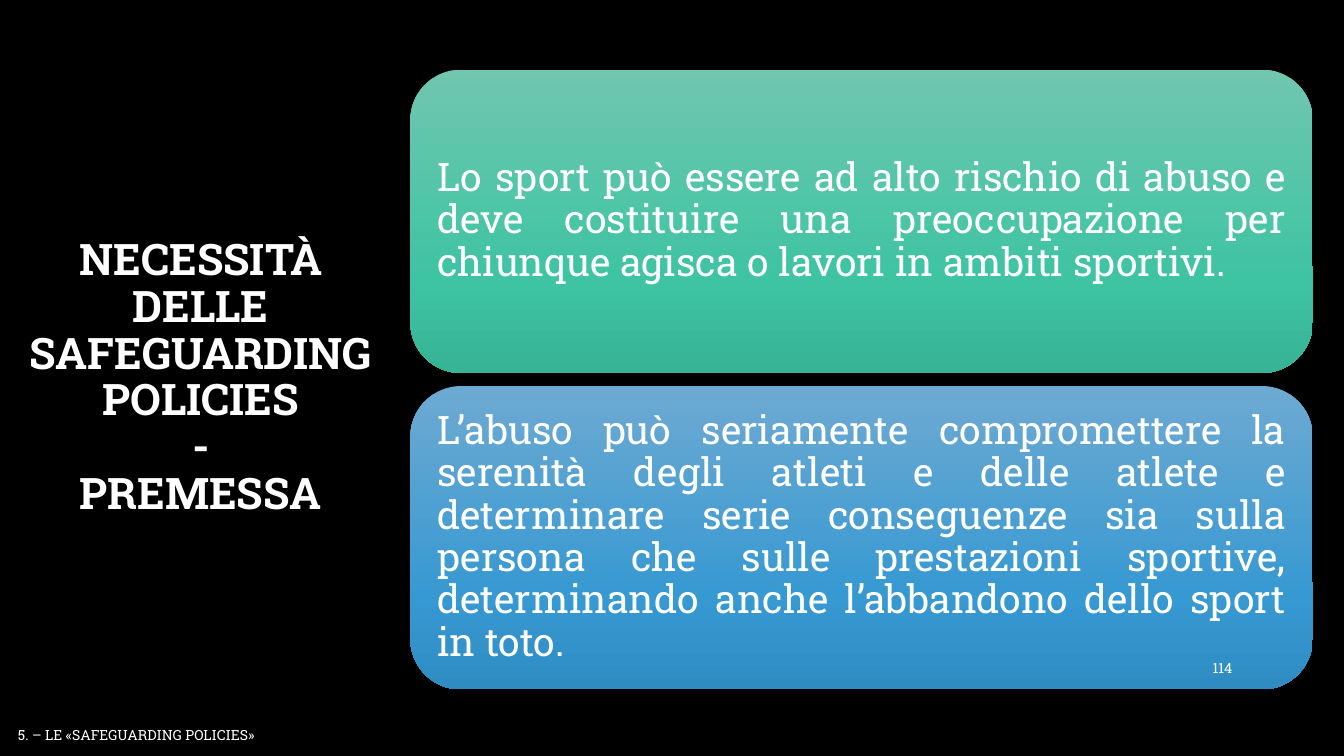
from copy import deepcopy

from pptx import Presentation
from pptx.dml.color import RGBColor
from pptx.enum.shapes import MSO_SHAPE
from pptx.enum.text import MSO_ANCHOR, MSO_AUTO_SIZE, PP_ALIGN
from pptx.util import Inches, Pt

FONT = "Roboto Slab"
WHITE = "FFFFFF"
BLACK = "000000"
STOP_POSITIONS = (0, 0.69, 1)
CARD_TOP = 0.69
CARD_STEP = 3.14
TITLE_LINES = ("NECESSITÀ DELLE SAFEGUARDING POLICIES", "-", "PREMESSA")
CARDS = (
    (
        ("70C6AF", "3EC4A3", "37B395"),
        "Lo sport può essere ad alto rischio di abuso e deve costituire una "
        "preoccupazione per chiunque agisca o lavori in ambiti sportivi.",
    ),
    (
        ("6DAAD2", "3799D2", "2F8CC2"),
        "L’abuso può seriamente compromettere la serenità degli atleti e delle "
        "atlete e determinare serie conseguenze sia sulla persona che sulle "
        "prestazioni sportive, determinando anche l’abbandono dello sport in toto.",
    ),
)


def color(value):
    """Turn a hex string into a colour."""
    return RGBColor.from_string(value)


def write_lines(text_frame, lines, size, alignment, bold=False, spacing=1.0):
    """Write one paragraph whose lines are parted by line breaks."""
    text_frame.word_wrap = True
    paragraph = text_frame.paragraphs[0]
    paragraph.alignment = alignment
    paragraph.line_spacing = spacing
    for index, line in enumerate(lines):
        if index:
            paragraph.add_line_break()
        run = paragraph.add_run()
        run.text = line
        run.font.name = FONT
        run.font.size = Pt(size)
        run.font.bold = bold
        run.font.color.rgb = color(WHITE)


def add_text(slide, left, top, width, height, lines, size, alignment,
             anchor=MSO_ANCHOR.MIDDLE, **style):
    """Add a text box and return its text frame."""
    box = slide.shapes.add_textbox(
        Inches(left), Inches(top), Inches(width), Inches(height))
    box.text_frame.vertical_anchor = anchor
    write_lines(box.text_frame, lines, size, alignment, **style)
    return box.text_frame


def fill_gradient(shape, colors):
    """Fill a shape with a three-stop gradient running downwards."""
    shape.fill.gradient()
    shape.fill.gradient_angle = 270
    stop_list = shape.element.spPr.find(".//{*}gsLst")
    stop_list.append(deepcopy(stop_list[-1]))
    for stop, position, value in zip(
            shape.fill.gradient_stops, STOP_POSITIONS, colors):
        stop.position = position
        stop.color.rgb = color(value)


def add_card(slide, top, colors, text):
    """Add a rounded gradient card with justified text."""
    card = slide.shapes.add_shape(
        MSO_SHAPE.ROUNDED_RECTANGLE,
        Inches(4.07), Inches(top), Inches(8.95), Inches(3.01))
    card.shadow.inherit = False
    card.line.fill.background()
    fill_gradient(card, colors)
    frame = card.text_frame
    frame.vertical_anchor = MSO_ANCHOR.MIDDLE
    frame.margin_left = frame.margin_right = Inches(0.12)
    frame.margin_top = frame.margin_bottom = Inches(0.12)
    write_lines(frame, [text], 28, PP_ALIGN.JUSTIFY, spacing=0.9)


def main():
    """Build the slide and save it."""
    presentation = Presentation()
    presentation.slide_width = Inches(13.33)
    presentation.slide_height = Inches(7.5)
    slide = presentation.slides.add_slide(presentation.slide_layouts[6])
    slide.background.fill.solid()
    slide.background.fill.fore_color.rgb = color(BLACK)

    add_text(slide, 0, CARD_TOP, 3.98, 6.13, TITLE_LINES, 31,
             PP_ALIGN.CENTER, bold=True, spacing=0.9)
    for index, (colors, text) in enumerate(CARDS):
        add_card(slide, CARD_TOP + index * CARD_STEP, colors, text)
    add_text(slide, 11.5, 6.43, 0.82, 0.4, ["114"], 10, PP_ALIGN.RIGHT)
    footer = add_text(slide, 0.08, 7.16, 6.7, 0.27,
                      ["5. – LE «SAFEGUARDING POLICIES»"], 10,
                      PP_ALIGN.LEFT, anchor=MSO_ANCHOR.TOP)
    footer.auto_size = MSO_AUTO_SIZE.SHAPE_TO_FIT_TEXT

    presentation.save("out.pptx")


if __name__ == "__main__":
    main()
